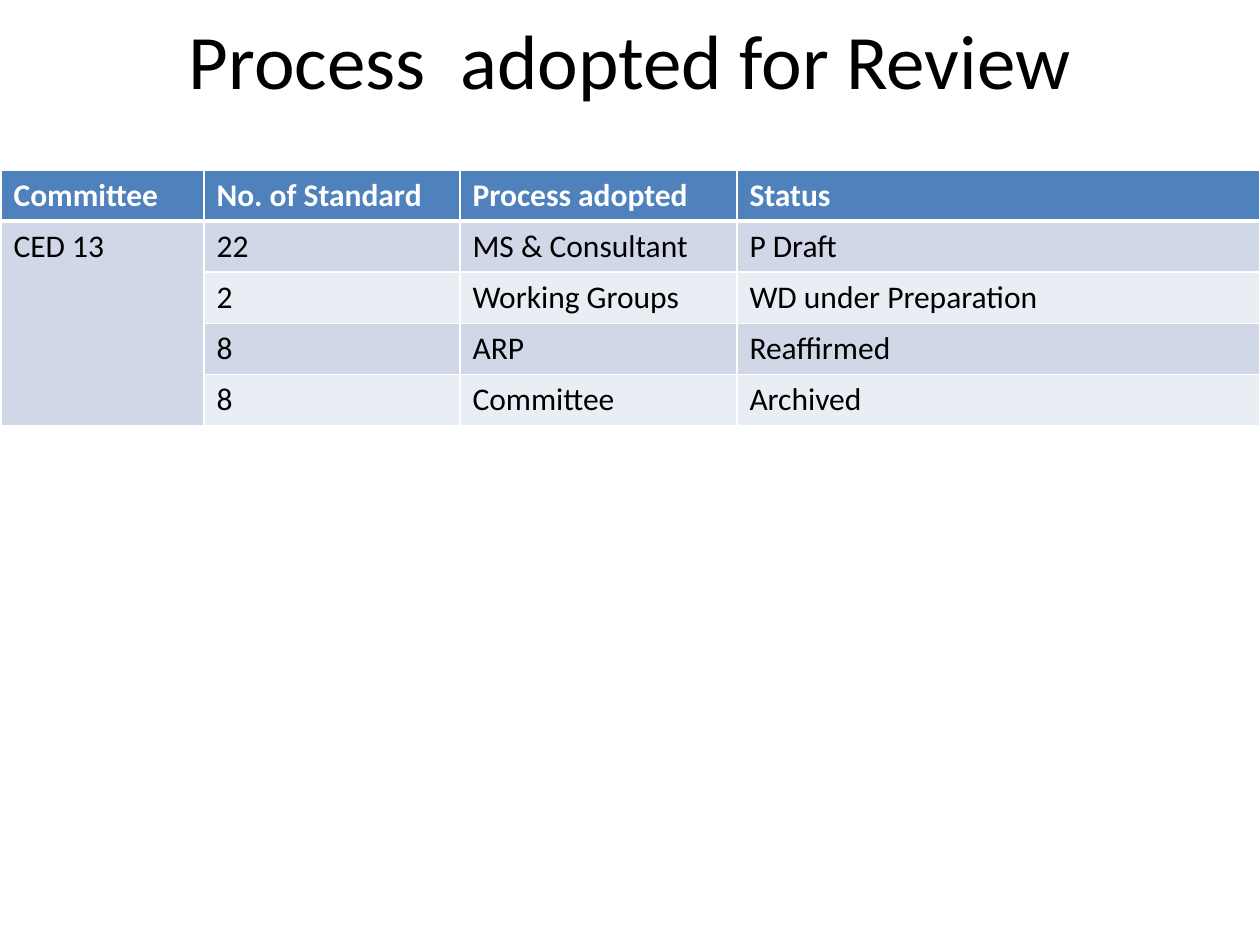
"""Build a slide with a table of the process adopted for review."""
from pptx import Presentation
from pptx.dml.color import RGBColor
from pptx.enum.text import MSO_ANCHOR, PP_ALIGN
from pptx.oxml import parse_xml
from pptx.oxml.ns import nsdecls
from pptx.util import Emu, Pt

TITLE = "Process  adopted for Review"
HEAD = ("Committee", "No. of Standard", "Process adopted", "Status")
GROUP = "CED 13"
ROWS = [
    ("22", "MS & Consultant", "P Draft"),
    ("2", "Working Groups", "WD under Preparation"),
    ("8", "ARP", "Reaffirmed"),
    ("8", "Committee", "Archived"),
]
WIDTHS = (203, 256, 277, 523)
ROW_H = 51
FONT = "Calibri"
BLACK = RGBColor(0x00, 0x00, 0x00)
WHITE = RGBColor(0xFF, 0xFF, 0xFF)
BLUE = RGBColor(0x4F, 0x81, 0xBD)
BANDS = (RGBColor(0xD0, 0xD8, 0xE8), RGBColor(0xE9, 0xED, 0xF4))


def px(count):
    return Emu(round(count * 914400 / 126))


def style(frame, size, color, bold=False):
    for run in frame.paragraphs[0].runs:
        font = run.font
        font.name, font.size, font.bold = FONT, Pt(size), bold
        font.color.rgb = color


def border(cell, widths):
    props = cell._tc.get_or_add_tcPr()
    for side, width in zip("LRTB", widths):
        props.append(parse_xml(
            f'<a:ln{side} {nsdecls("a")} w="{Pt(width)}"><a:solidFill>'
            f'<a:srgbClr val="{WHITE}"/></a:solidFill></a:ln{side}>'))


def add_title(slide):
    title = slide.shapes.title
    title.left, title.top, title.width, title.height = map(px, (63, 0, 1134, 117))
    frame = title.text_frame
    frame.text = TITLE
    frame.vertical_anchor = MSO_ANCHOR.MIDDLE
    frame.paragraphs[0].alignment = PP_ALIGN.CENTER
    style(frame, 44, BLACK)


def add_grid(slide):
    grid = [HEAD] + [(GROUP if i == 0 else "",) + row for i, row in enumerate(ROWS)]
    box = map(px, (1, 170, sum(WIDTHS), ROW_H * len(grid)))
    table = slide.shapes.add_table(len(grid), len(HEAD), *box).table
    for col, width in zip(table.columns, WIDTHS):
        col.width = px(width)
    for r, row in enumerate(grid):
        table.rows[r].height = px(ROW_H)
        for c, text in enumerate(row):
            cell = table.cell(r, c)
            cell.text_frame.text = text
            top = r == 0
            style(cell.text_frame, 18, WHITE if top else BLACK, top)
            border(cell, (1, 1, 3 if r == 1 else 1, 3 if top else 1))
            cell.fill.solid()
            cell.fill.fore_color.rgb = BLUE if top else BANDS[(r - 1) % 2]
    table.cell(1, 0).merge(table.cell(len(ROWS), 0))


def main():
    deck = Presentation()
    deck.slide_width, deck.slide_height = px(1260), px(945)
    slide = deck.slides.add_slide(deck.slide_layouts[5])
    add_title(slide)
    add_grid(slide)
    deck.save("out.pptx")


if __name__ == "__main__":
    main()
